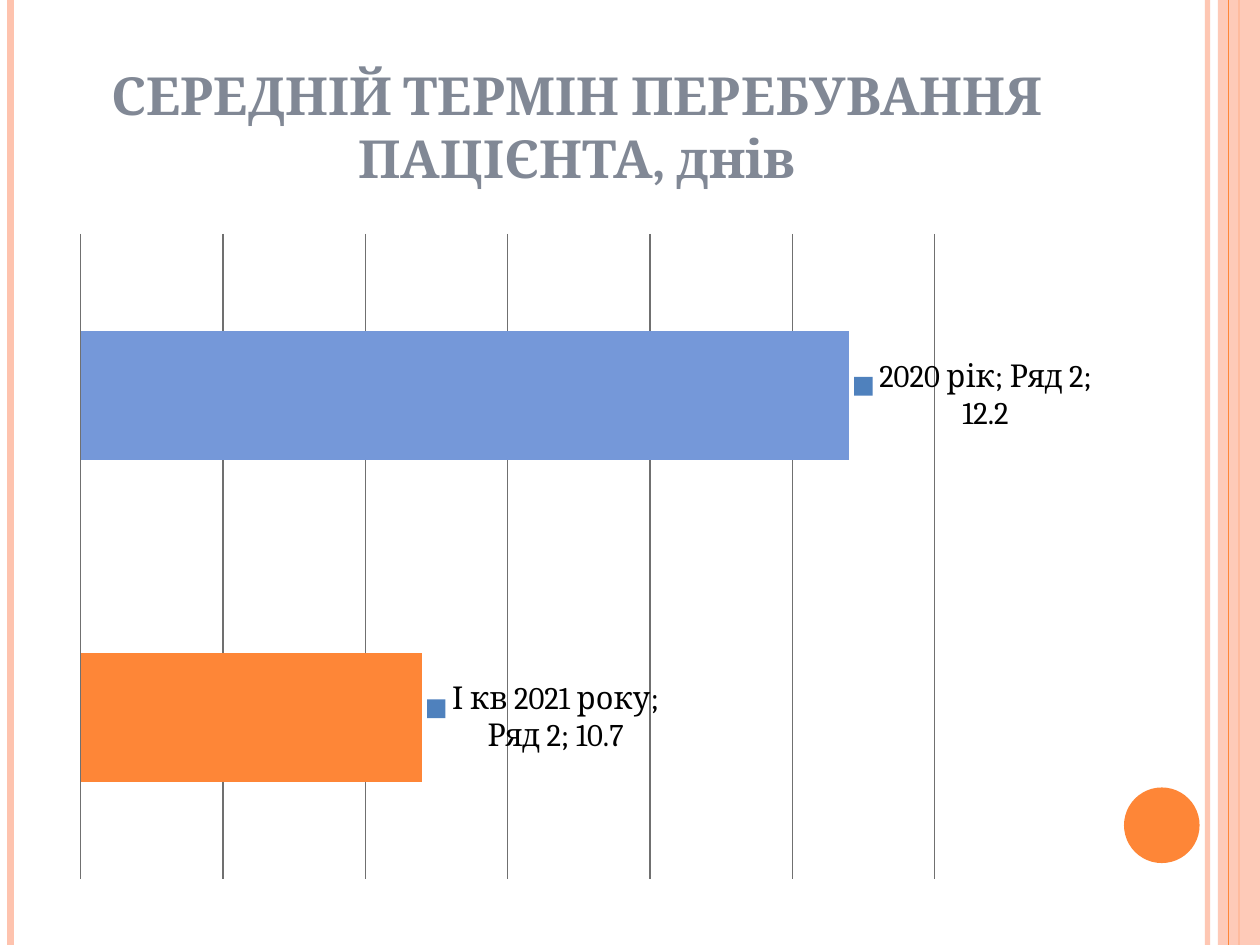
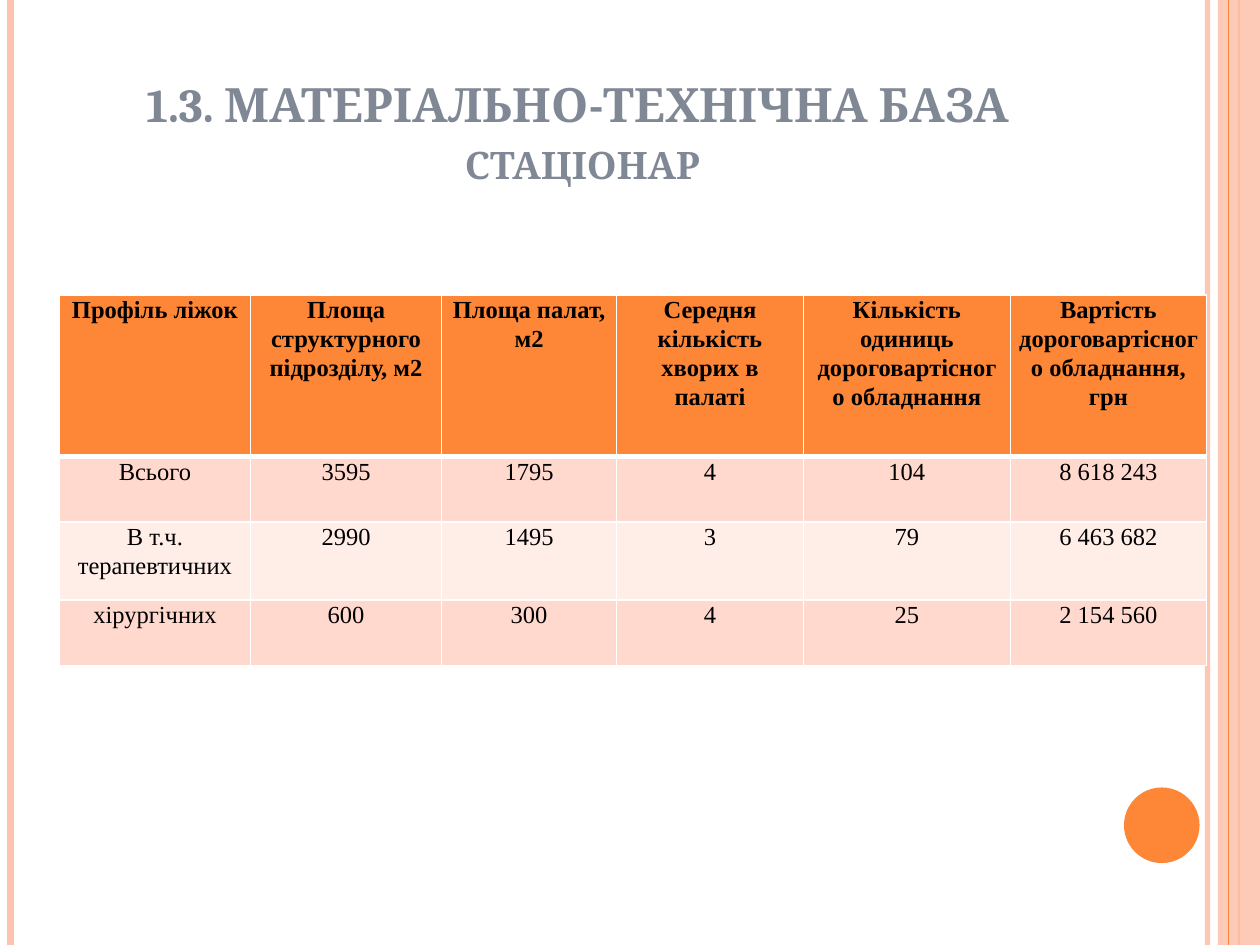
from lxml import etree
from pptx import Presentation
from pptx.chart import data
from pptx.dml.color import RGBColor
from pptx.enum import chart as ch, shapes, text
from pptx.oxml import ns, parse_xml
from pptx.util import Pt

ORANGE = RGBColor(0xFE, 0x86, 0x37)
PEACH = RGBColor(0xFE, 0xC3, 0xAE)
BLUE = RGBColor(0x75, 0x98, 0xD9)
SLATE = RGBColor(0x81, 0x88, 0x95)
GREY = RGBColor(0x70, 0x70, 0x70)
WHITE = RGBColor(0xFF, 0xFF, 0xFF)
BLACK = RGBColor(0, 0, 0)
BANDS = [RGBColor(0xFF, 0xD9, 0xCE), RGBColor(0xFF, 0xED, 0xE8)]
HEAD_FONT, CELL_FONT = "Cambria", "Times New Roman"
WIDE, HIGH = 720, 540


def sub(node, tag, **attrs):
    return etree.SubElement(node, ns.qn(tag), **attrs)


class Deck:
    def __init__(self):
        self.prs = Presentation()
        self.prs.slide_width, self.prs.slide_height = Pt(WIDE), Pt(HIGH)

    def page(self, *runs):
        """Start a slide with the shared frame and a title."""
        self.slide = self.prs.slides.add_slide(self.prs.slide_layouts[5])
        self.rule(690, PEACH, 3, 93)
        self.rule(6, PEACH, 4.5)
        self.rule(708, ORANGE, 1.5)
        self.shape(shapes.MSO_SHAPE.RECTANGLE, (696, 0, 24, HIGH), PEACH, 87)
        self.rule(702, ORANGE, 0.75)
        self.shape(shapes.MSO_SHAPE.OVAL, (642.3, 450, 43.2, 43.2), ORANGE)
        self.title(runs)

    def fade(self, fill, alpha):
        color = fill._xPr.find(".//" + ns.qn("a:srgbClr"))
        sub(color, "a:alpha", val=str(alpha * 1000))

    def rule(self, x, color, width, alpha=100):
        line = self.slide.shapes.add_connector(
            shapes.MSO_CONNECTOR.STRAIGHT, Pt(x), 0, Pt(x), Pt(HIGH))
        line.line.color.rgb = color
        line.line.width = Pt(width)
        if alpha < 100:
            self.fade(line.line.fill, alpha)
        sub(line._element.spPr, "a:effectLst")

    def shape(self, kind, box, color, alpha=100):
        item = self.slide.shapes.add_shape(kind, *map(Pt, box))
        item.shadow.inherit = False
        item.fill.solid()
        item.fill.fore_color.rgb = color
        item.line.fill.background()
        if alpha < 100:
            self.fade(item.fill, alpha)

    def run(self, para, words, font, size, color, bold):
        run = para.add_run()
        run.text = words
        run.font.name, run.font.size, run.font.bold = font, Pt(size), bold
        run.font.color.rgb = color

    def title(self, runs):
        head = self.slide.shapes.title
        head.left, head.top, head.width, head.height = map(
            Pt, (36, 21.6, 588, 90))
        frame = head.text_frame
        frame.word_wrap = True
        frame.auto_size = text.MSO_AUTO_SIZE.NONE
        frame.vertical_anchor = text.MSO_ANCHOR.BOTTOM
        para = frame.paragraphs[0]
        para.alignment = text.PP_ALIGN.CENTER
        for words, size in runs:
            if words == "\n":
                para.add_line_break()
            else:
                self.run(para, words, HEAD_FONT, size, SLATE, True)

    def bars(self, box, name, points, low, high, step):
        info = data.CategoryChartData()
        info.categories = [label for label, _, _ in points]
        info.add_series(name, [value for _, value, _ in points])
        chart = self.slide.shapes.add_chart(
            ch.XL_CHART_TYPE.BAR_CLUSTERED, *map(Pt, box), info).chart
        chart.has_legend = chart.has_title = False
        chart.font.name, chart.font.size = HEAD_FONT, Pt(18)
        chart.font.color.rgb = BLACK
        # Axes: hidden, gridlines only
        axis = chart.value_axis
        axis.minimum_scale, axis.maximum_scale = low, high
        axis.major_unit = step
        axis.has_major_gridlines = True
        axis.major_gridlines.format.line.color.rgb = GREY
        axis.major_gridlines.format.line.width = Pt(0.75)
        axis.visible = chart.category_axis.visible = False
        # Bars and labels
        plot = chart.plots[0]
        plot.gap_width = 150
        plot.vary_by_categories = False
        for point, (_, _, color) in zip(plot.series[0].points, points):
            point.format.fill.solid()
            point.format.fill.fore_color.rgb = color
        plot.has_data_labels = True
        tags = plot.data_labels
        tags.show_value = tags.show_category_name = True
        tags.show_series_name = tags.show_legend_key = True
        tags.position = ch.XL_LABEL_POSITION.OUTSIDE_END
        mark = sub(tags._element, "c:separator")
        mark.text = "; "
        tags._element.find(ns.qn("c:showBubbleSize")).addnext(mark)
        # Plot area
        area = chart._chartSpace.chart.plotArea
        for old in area.findall(ns.qn("c:layout")):
            area.remove(old)
        frame = parse_xml(f"<c:layout {ns.nsdecls('c')}/>")
        area.insert(0, frame)
        manual = sub(frame, "c:manualLayout")
        for tag, val in (("layoutTarget", "inner"), ("xMode", "edge"),
                         ("yMode", "edge"), ("x", "0.0175"), ("y", "0.02"),
                         ("w", "0.8525"), ("h", "0.96")):
            sub(manual, "c:" + tag, val=val)

    def edge(self, cell, side, width):
        line = sub(cell._tc.get_or_add_tcPr(), "a:ln" + side,
                   w=str(Pt(width)))
        sub(sub(line, "a:solidFill"), "a:srgbClr", val=str(WHITE))

    def cell(self, cell, words, row):
        for side in "LRTB":
            thick = (row, side) in ((0, "B"), (1, "T"))
            self.edge(cell, side, 3 if thick else 1)
        cell.fill.solid()
        cell.fill.fore_color.rgb = BANDS[(row - 1) % 2] if row else ORANGE
        cell.margin_left = cell.margin_right = Pt(5)
        cell.margin_top = cell.margin_bottom = 0
        para = cell.text_frame.paragraphs[0]
        para.alignment = text.PP_ALIGN.CENTER
        para.line_spacing = 1.07
        self.run(para, words, CELL_FONT, 14, BLACK, row == 0)

    def table(self, x, y, cols, rows, cells):
        grid = self.slide.shapes.add_table(
            len(rows), len(cols), Pt(x), Pt(y),
            Pt(sum(cols)), Pt(sum(rows))).table
        for col, width in zip(grid.columns, cols):
            col.width = Pt(width)
        for row, height in zip(grid.rows, rows):
            row.height = Pt(height)
        for r, line in enumerate(cells):
            for c, words in enumerate(line):
                self.cell(grid.cell(r, c), words, r)


def main():
    deck = Deck()

    # Average stay
    deck.page(("СЕРЕДНІЙ ТЕРМІН ПЕРЕБУВАННЯ ПАЦІЄНТА, днів", 30))
    deck.bars((36, 126, 588, 384), "Ряд 2",
              [("І кв 2021 року", 10.7, ORANGE), ("2020 рік", 12.2, BLUE)],
              9.5, 12.5, 0.5)

    # Wards and equipment
    deck.page(("1.3. МАТЕРІАЛЬНО-ТЕХНІЧНА БАЗА", 27), ("\n", 27),
              (" ", 27), ("СТАЦІОНАР", 21.6))
    deck.table(
        34, 168.6, [109.2, 109.2, 100, 106.8, 118.2, 112.2],
        [92.2, 37.4, 44.7, 37.4],
        [["Профіль ліжок", "Площа структурного підрозділу, м2",
          "Площа палат, м2", "Середня кількість хворих в палаті",
          "Кількість одиниць дороговартісного обладнання",
          "Вартість дороговартісного обладнання, грн"],
         ["Всього", "3595", "1795", "4", "104", "8 618 243"],
         ["В т.ч. терапевтичних", "2990", "1495", "3", "79", "6 463 682"],
         ["хірургічних", "600", "300", "4", "25", "2 154 560"]])

    deck.prs.save("out.pptx")


if __name__ == "__main__":
    main()
